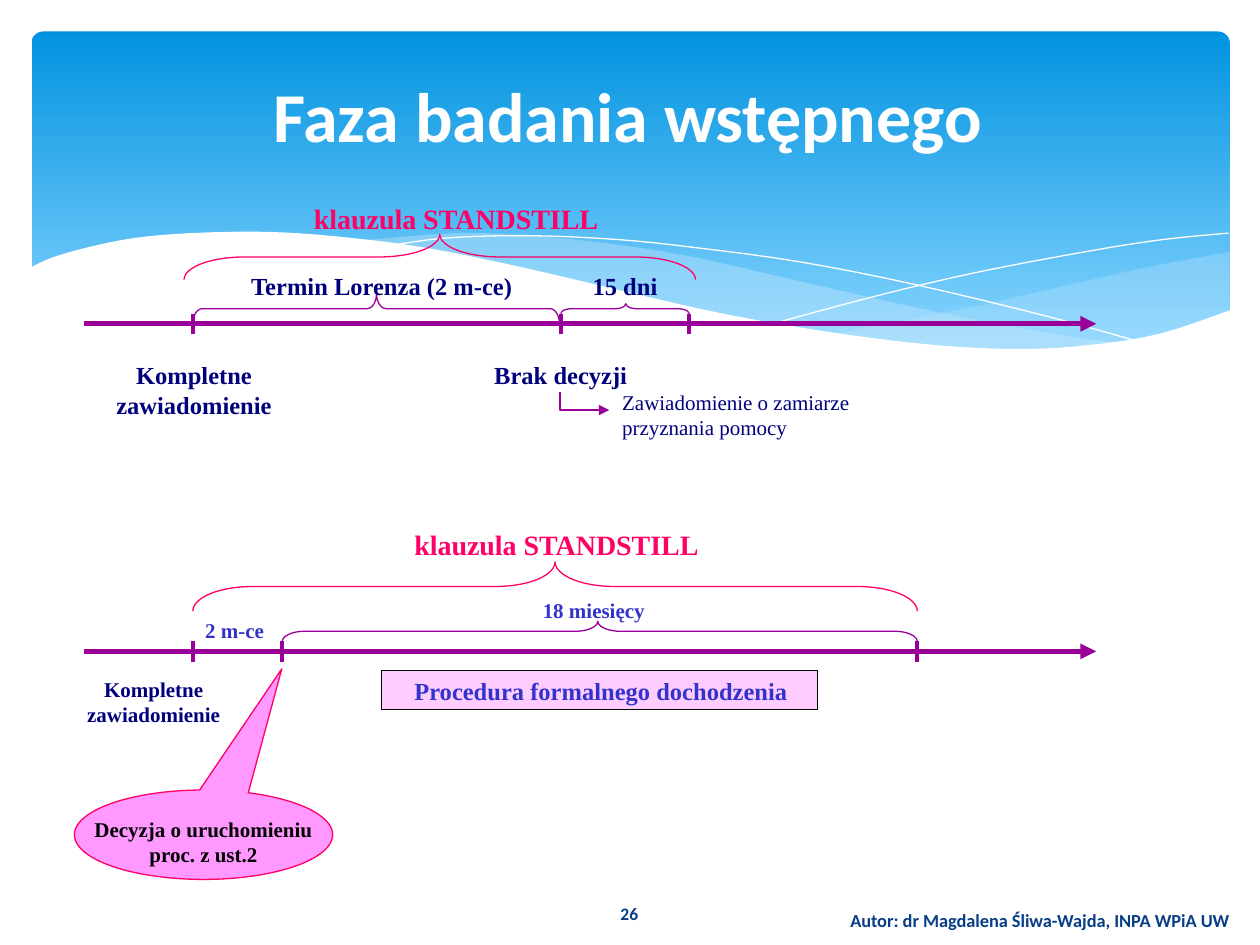
from dataclasses import dataclass
from lxml.etree import SubElement
from pptx import Presentation
from pptx.dml.color import RGBColor
from pptx.enum.shapes import MSO_CONNECTOR as Link, MSO_SHAPE as Kind
from pptx.enum.text import MSO_ANCHOR as Anchor, MSO_AUTO_SIZE as Auto, PP_ALIGN as Align
from pptx.oxml.ns import qn
from pptx.util import Inches, Pt

# Grid of 100 columns by 75 rows with square cells; all places are in cells
COLS, ROWS = 100, 75
CELL = Inches(10) // COLS

WHITE = RGBColor(0xFF, 0xFF, 0xFF)
BLACK = RGBColor(0x00, 0x00, 0x00)
SKY = RGBColor(0x02, 0x93, 0xE0)
PALE = RGBColor(0x83, 0xD3, 0xFE)
MIST = RGBColor(0xC6, 0xE7, 0xFC)
STEEL = RGBColor(0x07, 0x3E, 0x87)
NAVY = RGBColor(0x00, 0x00, 0x7D)
BLUE = RGBColor(0x33, 0x33, 0xCC)
PLUM = RGBColor(0x99, 0x00, 0x99)
ROSE = RGBColor(0xFF, 0x00, 0x66)
PINK = RGBColor(0xFF, 0x99, 0xFF)
BLUSH = RGBColor(0xFF, 0xCC, 0xFF)
SERIF, SANS = "Times New Roman", "Calibri"


@dataclass
class Box:
    x: float
    y: float
    w: float
    h: float


@dataclass
class Label:
    text: str
    box: Box
    size: float
    color: RGBColor
    bold: bool = True
    align: Align = Align.CENTER
    font: str = SERIF
    wrap: bool = True


@dataclass
class Brace:
    box: Box
    curl: float
    mid: float
    color: RGBColor
    kind: Kind = Kind.LEFT_BRACE
    turn: int = 90


@dataclass
class Axis:
    row: float
    ticks: tuple


@dataclass
class Wave:
    curves: list
    fill: RGBColor | None = None
    alpha: int = 100


AXES = [Axis(25.7, (15.3, 44.5, 54.7)), Axis(51.7, (15.3, 22.4, 72.8))]

BRACES = [
    Brace(Box(15.3, 23.3, 29.1, 2.4), 0.311, 0.499, PLUM),
    Brace(Box(44.5, 24.1, 10.2, 0.8), 1.093, 0.507, PLUM, Kind.RIGHT_BRACE, 270),
    Brace(Box(14.6, 18.6, 40.6, 3.6), 1.336, 0.5, ROSE),
    Brace(Box(22.4, 49.3, 50.4, 1.6), 1.119, 0.497, PLUM, Kind.RIGHT_BRACE, 270),
    Brace(Box(15.3, 44.6, 57.5, 3.9), 1.215, 0.5, ROSE),
]

LABELS = [
    Label("26", Box(43.6, 70.5, 12.7, 4), 10, STEEL, font=SANS),
    Label("Faza badania wstępnego", Box(3.9, 0.5, 91.8, 17.2), 40, WHITE, font=SANS),
    Label("Kompletne zawiadomienie", Box(7.5, 28.1, 15.8, 5.7), 14, NAVY),
    Label("Termin Lorenza (2 m-ce)", Box(17.7, 21, 25.2, 3.3), 14, NAVY),
    Label("15 dni", Box(44.5, 21, 10.2, 3.3), 14, NAVY),
    Label("Brak decyzji", Box(37.4, 28.1, 14.2, 3.3), 14, NAVY),
    Label("Zawiadomienie o zamiarze przyznania pomocy",
          Box(48.4, 30.4, 26, 5), 12, NAVY, False, Align.LEFT),
    Label("klauzula STANDSTILL", Box(17.7, 15.5, 37, 3.7), 16, ROSE),
    Label("Kompletne zawiadomienie", Box(5.1, 53.2, 14.2, 5), 12, NAVY),
    Label("Decyzja o uruchomieniu proc. z ust.2", Box(5.9, 64.3, 20.5, 5), 12, BLACK),
    Label("2 m-ce", Box(15.3, 48.5, 9.4, 3), 12, BLUE, align=Align.LEFT),
    Label("18 miesięcy", Box(42.1, 46.9, 11, 3), 12, BLUE, align=Align.LEFT),
    Label("Procedura formalnego dochodzenia",
          Box(31.9, 53.2, 41.7, 3.3), 14, BLUE, align=Align.LEFT),
    Label("klauzula STANDSTILL", Box(31.9, 41.4, 24.6, 3.7), 16, ROSE,
          align=Align.LEFT, wrap=False),
    Label("Autor: dr Magdalena Śliwa-Wajda, INPA WPiA UW",
          Box(66.5, 71, 41.4, 4), 10.5, STEEL, align=Align.LEFT, font=SANS),
]

# Each curve is smoothed by itself; curves of one wave meet at corners
WAVES = [
    Wave([[(97.6, 20), (92.1, 21), (86.1, 22.3), (77.9, 24.2), (66.1, 26.5)],
          [(66.1, 26.5), (71.9, 27.2), (76.9, 27.7), (82.4, 27.7), (87.2, 27.4),
           (92.1, 26.5), (97.6, 24.7)]], MIST, 29),
    Wave([[(89.3, 27.3), (83.7, 26.5), (74.1, 24.7), (62.9, 22.2), (55.5, 20.5),
           (48.9, 19.4), (42, 18.7), (36.1, 18.5), (28.6, 19.1)],
          [(28.6, 19.1), (36.2, 20.3), (44.9, 22.2), (56.6, 24.8), (66.5, 26.6),
           (74.8, 27.6), (81.8, 27.8), (89.3, 27.3)]], MIST, 40),
    Wave([[(30.9, 19.5), (35.3, 18.9), (41.6, 18.7), (48.9, 19), (55.6, 19.7),
           (63.6, 20.8), (72.7, 22.6), (83.1, 25.1), (90.7, 27.2)]]),
    Wave([[(61.3, 25.7), (69.5, 23.5), (77.6, 21.6), (86.6, 19.9), (92.4, 19),
           (97.5, 18.5)]]),
    Wave([[(97.7, 24.6), (92, 26.5), (86.3, 27.4), (80.9, 27.7), (74.4, 27.4),
           (66.8, 26.5), (57.9, 25), (50.3, 23.3), (41.8, 21.3), (34, 19.7),
           (27.1, 18.8), (21.1, 18.4), (15.2, 18.5), (10.6, 18.9), (6.7, 19.7),
           (4, 20.5), (2.3, 21.3)], [(2.3, 32.9), (97.7, 32.9)]], WHITE),
]


def cells(*nums: float) -> list[int]:
    return [round(n * CELL) for n in nums]


def smooth(pts: list, steps: int = 4) -> list:
    """Catmull-Rom curve through the points."""
    ends = [pts[0], *pts, pts[-1]]
    out = [pts[0]]
    for a, b, c, d in zip(ends, ends[1:], ends[2:], ends[3:]):
        for k in range(1, steps + 1):
            t = k / steps
            out.append(tuple(
                (2 * q + (r - p) * t + (2 * p - 5 * q + 4 * r - s) * t ** 2
                 + (3 * q - p - 3 * r + s) * t ** 3) / 2
                for p, q, r, s in zip(a, b, c, d)))
    return out


def paint(shape, fill: RGBColor | None, line: RGBColor | None, width: float = 0.75) -> None:
    shape.shadow.inherit = False
    if fill is None:
        shape.fill.background()
    else:
        shape.fill.solid()
        shape.fill.fore_color.rgb = fill
    if line is None:
        shape.line.fill.background()
    else:
        shape.line.color.rgb = line
        shape.line.width = Pt(width)


def draw_wave(shapes, wave: Wave) -> None:
    pts = [cells(*p) for curve in wave.curves for p in smooth(curve)]
    form = shapes.build_freeform(*pts[0])
    form.add_line_segments(pts[1:], close=wave.fill is not None)
    shape = form.convert_to_shape()
    paint(shape, wave.fill, None if wave.fill else WHITE, 0)
    if wave.alpha < 100:
        tone = shape.fill._xPr.find(".//" + qn("a:srgbClr"))
        SubElement(tone, qn("a:alpha"), val=str(wave.alpha * 1000))


def draw_shape(shapes, kind: Kind, box: Box, turn: int = 0, adjust: tuple = ()):
    """Place a shape so that it fills the box after its turn."""
    w, h = (box.h, box.w) if turn else (box.w, box.h)
    left, top = box.x + (box.w - w) / 2, box.y + (box.h - h) / 2
    shape = shapes.add_shape(kind, *cells(left, top, w, h))
    shape.rotation = turn
    for i, share in enumerate(adjust):
        shape.adjustments[i] = share
    return shape


def draw_line(shapes, start: tuple, end: tuple, width: float,
              arrow: bool = False, kind: Link = Link.STRAIGHT):
    link = shapes.add_connector(kind, *cells(*start, *end))
    link.line.color.rgb = PLUM
    link.line.width = Pt(width)
    if arrow:
        SubElement(link.line._get_or_add_ln(), qn("a:tailEnd"), type="triangle")
    SubElement(link._element.spPr, qn("a:effectLst"))
    return link


def draw_label(shapes, label: Label) -> None:
    box = label.box
    frame = shapes.add_textbox(*cells(box.x, box.y, box.w, box.h)).text_frame
    frame.word_wrap = label.wrap
    if label.font == SANS:
        frame.vertical_anchor = Anchor.MIDDLE
    else:
        frame.auto_size = Auto.SHAPE_TO_FIT_TEXT
    para = frame.paragraphs[0]
    para.alignment = label.align
    run = para.add_run()
    run.text = label.text
    font = run.font
    font.name, font.size, font.bold = label.font, Pt(label.size), label.bold
    font.color.rgb = label.color


def main() -> None:
    deck = Presentation()
    deck.slide_width, deck.slide_height = cells(COLS, ROWS)
    shapes = deck.slides.add_slide(deck.slide_layouts[6]).shapes

    # Blue banner with waves
    banner = draw_shape(shapes, Kind.ROUNDED_RECTANGLE, Box(2.5, 2.5, 95.1, 27), 0, (0.034,))
    paint(banner, None, None)
    banner.fill.gradient()
    banner.fill.gradient_angle = 270
    for stop, tone, place in zip(banner.fill.gradient_stops, (SKY, PALE), (0, 0.9)):
        stop.color.rgb, stop.position = tone, place
    for wave in WAVES:
        draw_wave(shapes, wave)

    # Time axes with ticks and braces
    for axis in AXES:
        draw_line(shapes, (6.7, axis.row), (87, axis.row), 3, True)
        for x in axis.ticks:
            draw_line(shapes, (x, axis.row - 0.8), (x, axis.row + 0.8), 2.25)
    for brace in BRACES:
        shape = draw_shape(shapes, brace.kind, brace.box, brace.turn, (brace.curl, brace.mid))
        paint(shape, None, brace.color)

    # Elbow arrow: down from the tick, then right to the note
    elbow = draw_line(shapes, (47.1, 29.9), (45.7, 33.8), 0.75, True, Link.ELBOW)
    elbow._element.spPr.find(qn("a:prstGeom")).set("prst", "bentConnector2")
    elbow._element.spPr.find(qn("a:xfrm")).set("rot", str(270 * 60000))

    # Callout and procedure bar
    paint(draw_shape(shapes, Kind.OVAL_CALLOUT, Box(5.9, 62.7, 20.5, 7.1), 90,
                     (-1.855, -0.303)), PINK, ROSE)
    paint(draw_shape(shapes, Kind.RECTANGLE, Box(30.3, 53.2, 34.6, 3.1)), BLUSH, BLACK)

    for label in LABELS:
        draw_label(shapes, label)
    deck.save("out.pptx")


if __name__ == "__main__":
    main()
